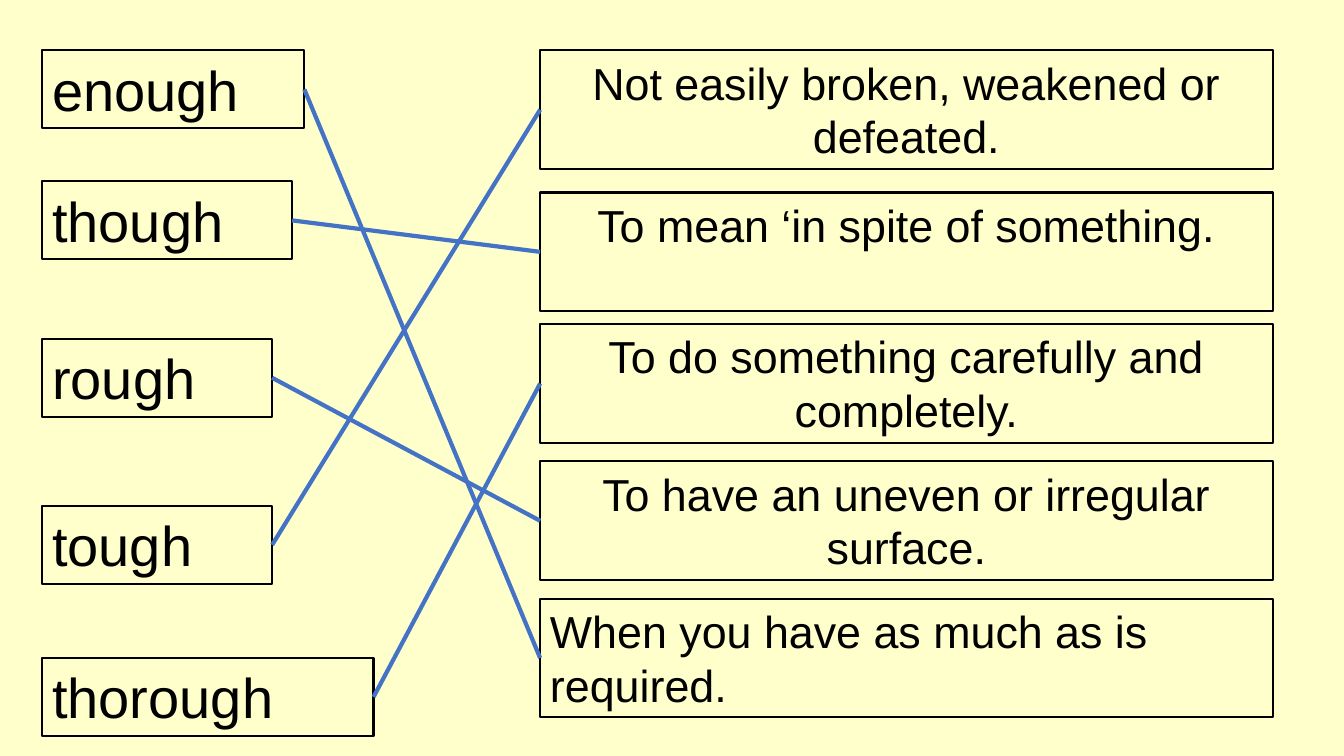
from lxml import etree
from pptx import Presentation
from pptx.dml.color import RGBColor
from pptx.enum import shapes, text
from pptx.oxml.ns import qn
from pptx.util import Pt


def color(hex_string):
    return RGBColor.from_string(hex_string)


def add_box(content, left, top, width, height, size, alignment):
    shape = slide.shapes.add_shape(
        shapes.MSO_SHAPE.RECTANGLE, Pt(left), Pt(top), Pt(width), Pt(height))
    shape.shadow.inherit = False
    shape.fill.background()
    shape.line.color.rgb = color("000000")
    shape.line.width = Pt(1.5)
    frame = shape.text_frame
    frame.word_wrap = True
    frame.auto_size = text.MSO_AUTO_SIZE.NONE
    frame.vertical_anchor = text.MSO_ANCHOR.TOP
    paragraph = frame.paragraphs[0]
    paragraph.text = content
    paragraph.alignment = alignment
    paragraph.font.name = "Arial"
    paragraph.font.size = Pt(size)
    paragraph.font.color.rgb = color("000000")
    return shape


presentation = Presentation()
presentation.slide_width = Pt(960)
presentation.slide_height = Pt(540)
slide = presentation.slides.add_slide(presentation.slide_layouts[6])
slide.background.fill.solid()
slide.background.fill.fore_color.rgb = color("FFFFCC")

LEFT, CENTER = text.PP_ALIGN.LEFT, text.PP_ALIGN.CENTER

# Words: text, top, width, index of the matching definition
words = [
    ("enough", 36, 187.2, 4),
    ("though", 129.6, 178.5, 1),
    ("rough", 242, 164.2, 3),
    ("tough", 361.4, 164.2, 0),
    ("thorough", 470, 236.6, 2),
]
word_boxes = [add_box(word, 30.2, top, width, 55.7, 40, LEFT)
              for word, top, width, match in words]

# Definitions: text, top, alignment
definitions = [
    ("Not easily broken, weakened or defeated.", 36, CENTER),
    ("To mean ‘in spite of something.", 137.5, CENTER),
    ("To do something carefully and completely.", 231.6, CENTER),
    ("To have an uneven or irregular surface.", 329.6, CENTER),
    ("When you have as much as is required.", 427.6, LEFT),
]
definition_boxes = [add_box(definition, 385.8, top, 523.4, 84.8, 32, alignment)
                    for definition, top, alignment in definitions]

# Lines from each word to its definition
for word_box, (word, top, width, match) in zip(word_boxes, words):
    connector = slide.shapes.add_connector(
        shapes.MSO_CONNECTOR.STRAIGHT, Pt(0), Pt(0), Pt(0), Pt(0))
    connector.begin_connect(word_box, 3)
    connector.end_connect(definition_boxes[match], 1)
    connector.line.color.rgb = color("4472C4")
    connector.line.width = Pt(3)
    etree.SubElement(connector._element.spPr, qn("a:effectLst"))

presentation.save("out.pptx")
